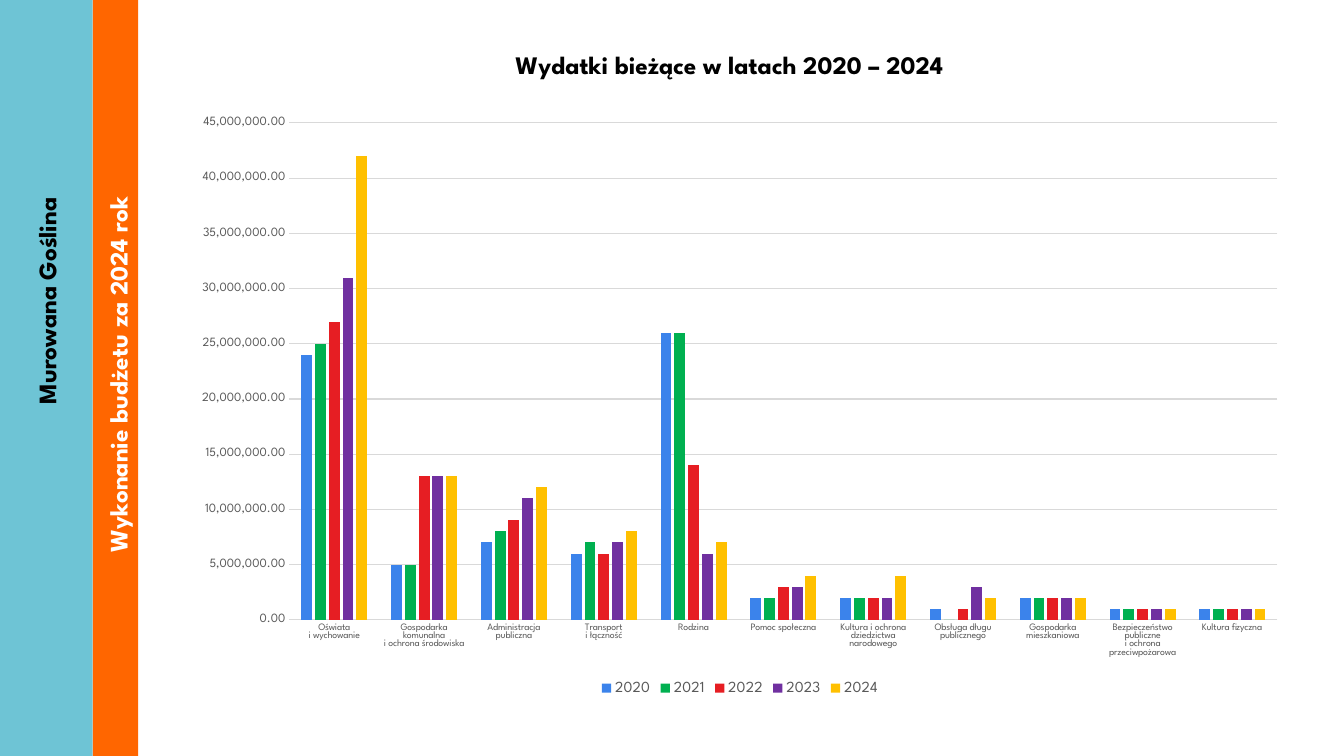
from lxml import etree
from pptx import Presentation
from pptx.chart.data import CategoryChartData
from pptx.dml.color import RGBColor
from pptx.enum.chart import XL_CHART_TYPE, XL_LEGEND_POSITION, XL_TICK_MARK
from pptx.enum.shapes import MSO_SHAPE
from pptx.enum.text import MSO_ANCHOR, MSO_AUTO_SIZE, PP_ALIGN
from pptx.oxml.ns import qn
from pptx.util import Inches, Pt

COLUMNS = XL_CHART_TYPE.COLUMN_CLUSTERED
BOTTOM = XL_LEGEND_POSITION.BOTTOM
NO_TICKS = XL_TICK_MARK.NONE
RECTANGLE = MSO_SHAPE.RECTANGLE
TOP, MIDDLE = MSO_ANCHOR.TOP, MSO_ANCHOR.MIDDLE
FIT_SHAPE = MSO_AUTO_SIZE.SHAPE_TO_FIT_TEXT
NO_FIT = MSO_AUTO_SIZE.NONE
CENTER = PP_ALIGN.CENTER

FONT = "League Spartan"
GRAY, LIGHT_GRAY = "595959", "D9D9D9"


def color(value):
    return RGBColor.from_string(value)


def set_font(font, size, value, bold=False):
    font.name = FONT
    font.size = Pt(size)
    font.bold = bold
    font.color.rgb = color(value)


deck = Presentation()
deck.slide_width = Inches(13.33)
deck.slide_height = Inches(7.5)
page = deck.slides.add_slide(deck.slide_layouts[5])

bands = [
    (0, 0.92, "6EC4D5", "Murowana Goślina", "000000", (-0.8, 2.65, 2.52, 0.4), TOP, False),
    (0.92, 0.45, "FF6600", "Wykonanie budżetu za 2024 rok", "FFFFFF", (-1.54, 2.67, 5.41, 0.4), MIDDLE, True),
]
for left, width, fill, label, text_color, place, anchor, wrap in bands:
    band = page.shapes.add_shape(RECTANGLE, Inches(left), 0, Inches(width), deck.slide_height)
    band.shadow.inherit = False
    band.fill.solid()
    band.fill.fore_color.rgb = color(fill)
    band.line.fill.background()

    box = page.shapes.add_textbox(*[Inches(length) for length in place])
    box.rotation = 270
    box.text_frame.word_wrap = wrap
    box.text_frame.auto_size = FIT_SHAPE
    box.text_frame.vertical_anchor = anchor
    span = box.text_frame.paragraphs[0].add_run()
    span.text = label
    set_font(span.font, 18, text_color, True)

title = page.shapes.title
title.left, title.top = Inches(4.63), Inches(0.48)
title.width, title.height = Inches(5.21), Inches(0.36)
title.text_frame.auto_size = NO_FIT
title.text_frame.vertical_anchor = MIDDLE
para = title.text_frame.paragraphs[0]
para.alignment = CENTER
para.line_spacing = 0.9
span = para.add_run()
span.text = "Wydatki bieżące w latach 2020 – 2024"
set_font(span.font, 18, "000000", True)

categories = [
    "Oświata\ni wychowanie",
    "Gospodarka komunalna\ni ochrona środowiska",
    "Administracja publiczna",
    "Transport\ni łączność",
    "Rodzina",
    "Pomoc społeczna",
    "Kultura i ochrona dziedzictwa narodowego",
    "Obsługa długu publicznego",
    "Gospodarka mieszkaniowa",
    "Bezpieczeństwo publiczne\ni ochrona przeciwpożarowa",
    "Kultura fizyczna",
]
spending_in_millions = [
    ("2020", "3B83EB", [24, 5, 7, 6, 26, 2, 2, 1, 2, 1, 1]),
    ("2021", "00B050", [25, 5, 8, 7, 26, 2, 2, 0, 2, 1, 1]),
    ("2022", "E61E23", [27, 13, 9, 6, 14, 3, 2, 1, 2, 1, 1]),
    ("2023", "7030A0", [31, 13, 11, 7, 6, 3, 2, 3, 2, 1, 1]),
    ("2024", "FFC000", [42, 13, 12, 8, 7, 4, 4, 2, 2, 1, 1]),
]
data = CategoryChartData(number_format="#,##0.00")
data.categories = categories
for year, fill, millions in spending_in_millions:
    data.add_series(year, [value * 1000000 for value in millions])

chart_width, chart_height = 11.12, 5.9
chart = page.shapes.add_chart(
    COLUMNS, Inches(1.78), Inches(1.04), Inches(chart_width), Inches(chart_height), data
).chart
chart.has_title = False
set_font(chart.font, 10, "000000")
chart.has_legend = True
chart.legend.position = BOTTOM
chart.legend.include_in_layout = False
set_font(chart.legend.font, 11, GRAY)

plot = chart.plots[0]
plot.gap_width = 219
plot.overlap = -27
plot.vary_by_categories = False
for series, (year, fill, millions) in zip(plot.series, spending_in_millions):
    series.format.fill.solid()
    series.format.fill.fore_color.rgb = color(fill)

category_axis, value_axis = chart.category_axis, chart.value_axis
for axis, size in [(category_axis, 7), (value_axis, 9)]:
    axis.major_tick_mark = NO_TICKS
    axis.minor_tick_mark = NO_TICKS
    set_font(axis.tick_labels.font, size, GRAY)
value_axis.minimum_scale = 0
value_axis.maximum_scale = 45000000
value_axis.major_unit = 5000000
value_axis.tick_labels.number_format = "#,##0.00"
value_axis.tick_labels.number_format_is_linked = False
value_axis.format.line.fill.background()
value_axis.has_major_gridlines = True
for line in [category_axis.format.line, value_axis.major_gridlines.format.line]:
    line.color.rgb = color(LIGHT_GRAY)
    line.width = Pt(0.75)

plot_area = chart.element.find(".//" + qn("c:plotArea"))
for old_layout in plot_area.findall(qn("c:layout")):
    plot_area.remove(old_layout)
layout = etree.Element(qn("c:layout"))
plot_area.insert(0, layout)
manual = etree.SubElement(layout, qn("c:manualLayout"))
for tag, value in [
    ("layoutTarget", "inner"), ("xMode", "edge"), ("yMode", "edge"),
    ("x", 1.09 / chart_width), ("y", 0.18 / chart_height),
    ("w", 9.8 / chart_width), ("h", 4.93 / chart_height),
]:
    etree.SubElement(manual, qn("c:" + tag)).set("val", str(value))

deck.save("out.pptx")
